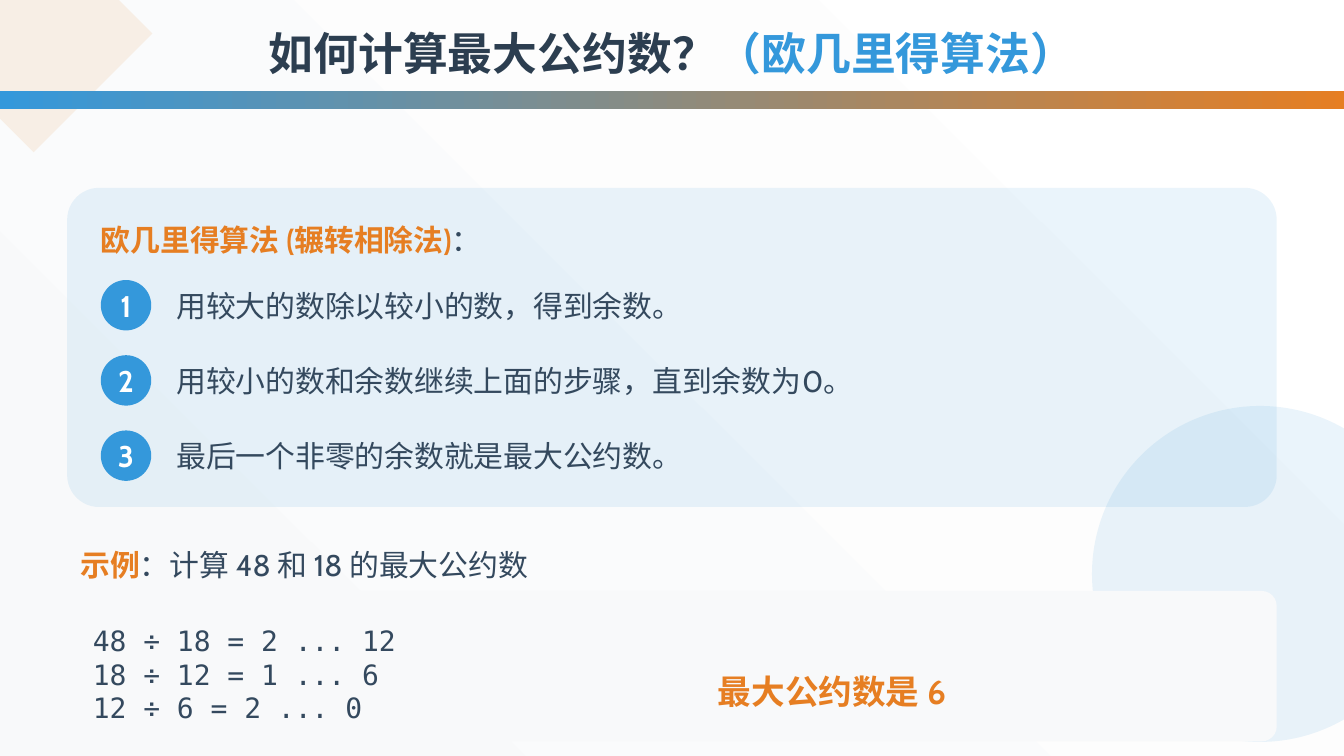
from dataclasses import dataclass

from lxml import etree
from pptx import Presentation
from pptx.dml.color import RGBColor
from pptx.enum.shapes import MSO_SHAPE
from pptx.enum.text import MSO_ANCHOR, MSO_AUTO_SIZE, PP_ALIGN
from pptx.oxml.ns import qn
from pptx.util import Pt

OVAL = MSO_SHAPE.OVAL
RECTANGLE = MSO_SHAPE.RECTANGLE
ROUNDED = MSO_SHAPE.ROUNDED_RECTANGLE
TOP, MIDDLE = MSO_ANCHOR.TOP, MSO_ANCHOR.MIDDLE
LEFT, CENTER = PP_ALIGN.LEFT, PP_ALIGN.CENTER
NO_AUTOFIT = MSO_AUTO_SIZE.NONE


@dataclass(frozen=True)
class Theme:
    blue: str = "3498DB"
    orange: str = "E67E22"
    heading: str = "2C3E50"
    text: str = "34495E"
    white: str = "FFFFFF"
    pale: str = "F8F9FA"
    font: str = "Cabin"
    mono: str = "DejaVu Sans Mono"
    title_size: int = 24
    result_size: int = 18
    body_size: int = 16
    code_size: int = 15


theme = Theme()

presentation = Presentation()
presentation.slide_width = Pt(720)
presentation.slide_height = Pt(405)
slide = presentation.slides.add_slide(presentation.slide_layouts[1])
shapes = slide.shapes


def add_filled(kind, box, color, opacity=100, radius=None):
    shape = shapes.add_shape(kind, *[Pt(value) for value in box])
    shape.shadow.inherit = False
    shape.line.fill.background()
    shape.fill.solid()
    shape.fill.fore_color.rgb = RGBColor.from_string(color)
    if opacity < 100:
        color_element = shape.fill._xPr.find(".//" + qn("a:srgbClr"))
        etree.SubElement(color_element, qn("a:alpha"), val=str(opacity * 1000))
    if radius is not None:
        shape.adjustments[0] = radius
    return shape


def write_lines(shape, lines, size, font=theme.font, align=LEFT,
                anchor=TOP, inset=(0, 0), wrap=True):
    frame = shape.text_frame
    frame.auto_size = NO_AUTOFIT
    frame.word_wrap = wrap
    frame.vertical_anchor = anchor
    frame.margin_left = frame.margin_right = Pt(inset[0])
    frame.margin_top = frame.margin_bottom = Pt(inset[1])
    for index, line in enumerate(lines):
        paragraph = frame.add_paragraph() if index else frame.paragraphs[0]
        paragraph.alignment = align
        paragraph.space_before = Pt(0)
        for text, color, bold in line:
            run = paragraph.add_run()
            run.text = text
            run.font.name = font
            run.font.size = Pt(size)
            run.font.bold = bold
            run.font.color.rgb = RGBColor.from_string(color)


background = slide.background.fill
background.gradient()
background.gradient_angle = 225
for stop, color in zip(background.gradient_stops, (theme.white, theme.pale)):
    stop.color.rgb = RGBColor.from_string(color)

title = shapes.title
title.left, title.top, title.width, title.height = Pt(36), Pt(10), Pt(648), Pt(34.5)
write_lines(title, [[("如何计算最大公约数？", theme.heading, True),
                     ("（欧几里得算法）", theme.blue, True)]],
            theme.title_size, align=CENTER, inset=(7.2, 3.6))

add_filled(OVAL, (585, 217.5, 180, 180), theme.blue, 10)
corner = add_filled(RECTANGLE, (-27, -27, 90, 90), theme.orange, 10)
corner.rotation = 45
add_filled(ROUNDED, (324, 53.5, 72, 3.6), theme.blue, radius=0.5)

add_filled(ROUNDED, (36, 100.6, 648, 171), theme.blue, 10, 0.1)
method = shapes.add_textbox(Pt(54), Pt(118.8), Pt(612), Pt(21.6))
write_lines(method, [[("欧几里得算法 (辗转相除法)", theme.orange, True),
                      ("：", theme.text, False)]], theme.body_size)

steps = [
    "用较大的数除以较小的数，得到余数。",
    "用较小的数和余数继续上面的步骤，直到余数为0。",
    "最后一个非零的余数就是最大公约数。",
]
for index, step in enumerate(steps):
    top = 150 + index * 40.3
    badge = add_filled(OVAL, (54, top, 27, 27), theme.blue)
    write_lines(badge, [[(str(index + 1), theme.white, True)]], theme.body_size,
                align=CENTER, anchor=MIDDLE, inset=(7.2, 3.6), wrap=False)
    label = shapes.add_textbox(Pt(94.5), Pt(top), Pt(564), Pt(27))
    write_lines(label, [[(step, theme.text, False)]], theme.body_size, anchor=MIDDLE)

example = shapes.add_textbox(Pt(36), Pt(289.5), Pt(648), Pt(21.6))
write_lines(example, [[("示例", theme.orange, True),
                       ("：计算 48 和 18 的最大公约数", theme.text, False)]],
            theme.body_size, inset=(7.2, 3.6))

add_filled(ROUNDED, (36, 316.6, 648, 80.6), theme.pale, radius=0.1)
divisions = slide.placeholders[1]
shapes._spTree.append(divisions._element)
divisions.left, divisions.top = Pt(49.7), Pt(334)
divisions.width, divisions.height = Pt(620.6), Pt(54)
calculations = ["48 ÷ 18 = 2 ... 12", "18 ÷ 12 = 1 ... 6", "12 ÷ 6 = 2 ... 0"]
write_lines(divisions, [[(line, theme.text, False)] for line in calculations],
            theme.code_size, theme.mono)
for paragraph in divisions.text_frame.paragraphs:
    properties = paragraph._p.get_or_add_pPr()
    properties.set("marL", "0")
    properties.set("indent", "0")
    etree.SubElement(properties, qn("a:buNone"))

result = shapes.add_textbox(Pt(121.7), Pt(355.7), Pt(648), Pt(26))
write_lines(result, [[("最大公约数是 6", theme.orange, True)]],
            theme.result_size, align=CENTER, inset=(7.2, 3.6))

divider = add_filled(RECTANGLE, (0, 49, 723, 9.7), theme.blue)
divider.fill.gradient()
divider.fill.gradient_angle = 0
for stop, color in zip(divider.fill.gradient_stops, (theme.blue, theme.orange)):
    stop.color.rgb = RGBColor.from_string(color)

presentation.save("out.pptx")
